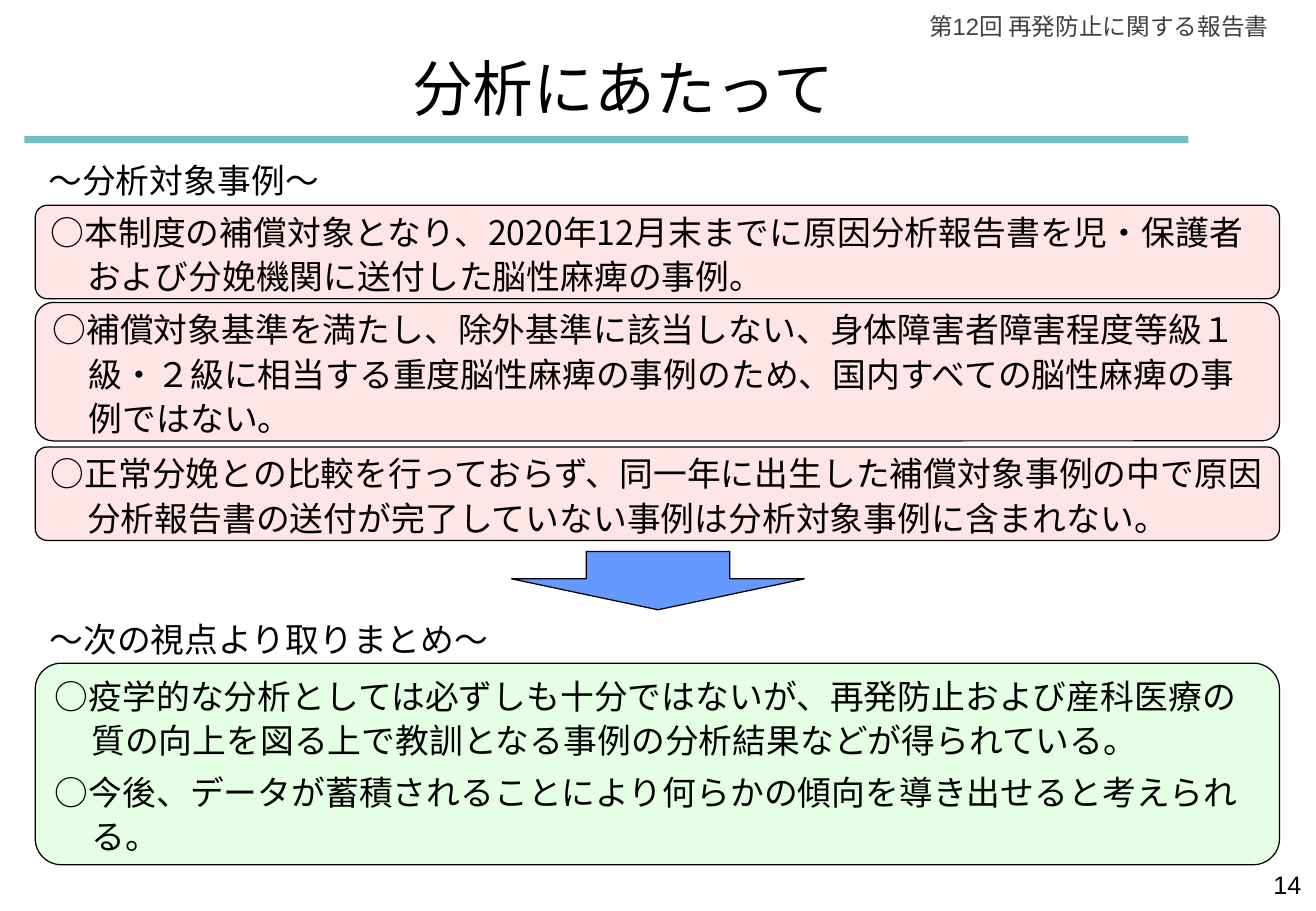
from lxml import etree
from pptx import Presentation
from pptx.dml.color import RGBColor
from pptx.enum.shapes import MSO_SHAPE
from pptx.enum.text import MSO_ANCHOR, PP_ALIGN
from pptx.oxml.ns import qn
from pptx.util import Inches, Pt

RECTANGLE = MSO_SHAPE.RECTANGLE
ROUNDED = MSO_SHAPE.ROUNDED_RECTANGLE
DOWN_ARROW = MSO_SHAPE.DOWN_ARROW
TOP, MIDDLE = MSO_ANCHOR.TOP, MSO_ANCHOR.MIDDLE
LEFT, CENTER, RIGHT = PP_ALIGN.LEFT, PP_ALIGN.CENTER, PP_ALIGN.RIGHT

COLORS = {
    "text": "000000",
    "header": "404040",
    "rule": "72BFC5",
    "target": "FFE5E5",
    "viewpoint": "E5FFE5",
    "arrow": "6699FF",
}
JAPANESE_FONT = "Noto Sans CJK JP"
LATIN_FONT = "Arial"
PANEL_LEFT, PANEL_WIDTH = 0.29, 10.24
HANGING = 0.3

TARGET_PANELS = [
    (1.69, 0.77, "○本制度の補償対象となり、2020年12月末までに原因分析報告書を"
                 "児・保護者および分娩機関に送付した脳性麻痺の事例。"),
    (2.49, 1.14, "○補償対象基準を満たし、除外基準に該当しない、身体障害者障害程度等級"
                 "１級・２級に相当する重度脳性麻痺の事例のため、国内すべての脳性麻痺の"
                 "事例ではない。"),
    (3.68, 0.77, "○正常分娩との比較を行っておらず、同一年に出生した補償対象事例の中で"
                 "原因分析報告書の送付が完了していない事例は分析対象事例に含まれない。"),
]
VIEWPOINTS = [
    "○疫学的な分析としては必ずしも十分ではないが、再発防止および産科医療の質の向上を"
    "図る上で教訓となる事例の分析結果などが得られている。",
    "○今後、データが蓄積されることにより何らかの傾向を導き出せると考えられる。",
]


def rgb(color):
    return RGBColor.from_string(COLORS[color])


def format_paragraph(paragraph, size, font=JAPANESE_FONT, color="text",
                     align=LEFT, spacing=1.0):
    paragraph.alignment = align
    paragraph.line_spacing = spacing
    for run in paragraph.runs:
        run.font.size = Pt(size)
        run.font.color.rgb = rgb(color)
        run.font.name = font
        east_asian = etree.SubElement(run.font._element, qn("a:ea"))
        east_asian.set("typeface", JAPANESE_FONT)


def add_label(slide, box, text, size, anchor=TOP, wrap=True, **style):
    label = slide.shapes.add_textbox(*map(Inches, box))
    frame = label.text_frame
    frame.word_wrap = wrap
    frame.vertical_anchor = anchor
    frame.text = text
    format_paragraph(frame.paragraphs[0], size, **style)


def add_filled_shape(slide, kind, box, fill, adjustments=(), outlined=True):
    shape = slide.shapes.add_shape(kind, *map(Inches, box))
    shape.shadow.inherit = False
    for index, value in enumerate(adjustments):
        shape.adjustments[index] = value
    shape.fill.solid()
    shape.fill.fore_color.rgb = rgb(fill)
    if outlined:
        shape.line.color.rgb = rgb("text")
        shape.line.width = Pt(0.75)
    else:
        shape.line.fill.background()
    return shape


def add_panel(slide, top, height, fill, statements):
    """Add a rounded panel whose statements have a hanging indent."""
    panel = add_filled_shape(slide, ROUNDED, (PANEL_LEFT, top, PANEL_WIDTH, height),
                             fill, [0.13])
    frame = panel.text_frame
    frame.word_wrap = True
    frame.vertical_anchor = MIDDLE
    frame.text = "\n".join(statements)
    for index, paragraph in enumerate(frame.paragraphs):
        properties = paragraph._p.get_or_add_pPr()
        properties.set("marL", str(Inches(HANGING)))
        properties.set("indent", str(-Inches(HANGING)))
        format_paragraph(paragraph, 20, spacing=1.1)
        paragraph.space_before = Pt(4 if index else 0)


def main():
    presentation = Presentation()
    presentation.slide_width = Inches(10.83)
    presentation.slide_height = Inches(7.5)
    slide = presentation.slides.add_slide(presentation.slide_layouts[6])

    add_filled_shape(slide, RECTANGLE, (0.2, 1.12, 9.58, 0.06), "rule", outlined=False)
    add_label(slide, (7.38, 0.05, 3.16, 0.34), "第12回 再発防止に関する報告書", 14,
              font=LATIN_FONT, color="header", align=RIGHT)
    add_label(slide, (3.26, 0.36, 3.74, 0.71), "分析にあたって", 36,
              anchor=MIDDLE, wrap=False, align=CENTER)

    add_label(slide, (0.3, 1.13, 10.2, 0.6), "～分析対象事例～", 20,
              anchor=MIDDLE, spacing=1.3)
    for top, height, statement in TARGET_PANELS:
        add_panel(slide, top, height, "target", [statement])

    add_filled_shape(slide, DOWN_ARROW, (4.21, 4.54, 2.41, 0.48), "arrow", [0.49, 0.53])

    add_label(slide, (0.31, 4.91, 10.2, 0.6), "～次の視点より取りまとめ～", 20,
              anchor=MIDDLE, spacing=1.3)
    add_panel(slide, 5.46, 1.66, "viewpoint", VIEWPOINTS)

    add_label(slide, (8.28, 7.11, 2.53, 0.52), "14", 15, font=LATIN_FONT, align=RIGHT)
    presentation.save("out.pptx")


if __name__ == "__main__":
    main()
